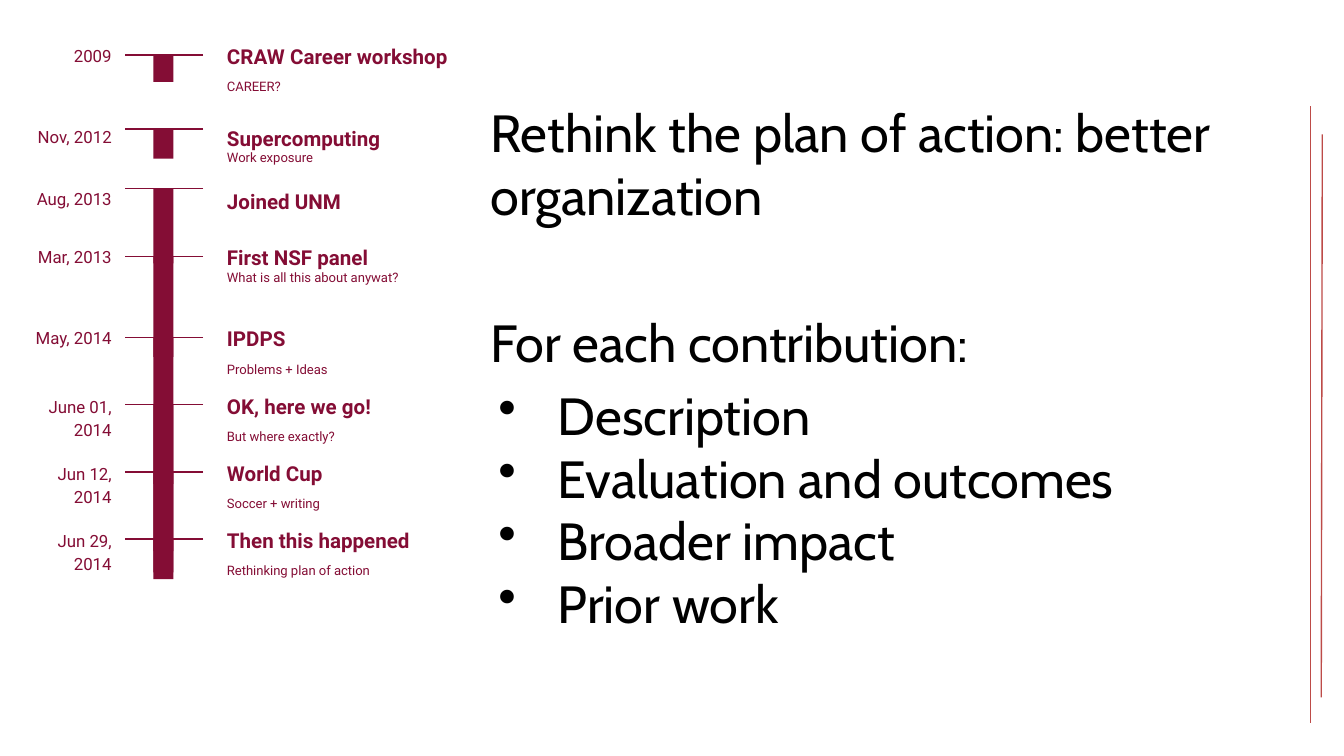
import pptx
import pptx.dml.color
import pptx.enum.shapes
import pptx.enum.text
import pptx.oxml
import pptx.oxml.ns
import pptx.util

Cm = pptx.util.Cm
Pt = pptx.util.Pt
ALIGN = pptx.enum.text.PP_ALIGN

COLORS = {"maroon": "840D35", "rule": "BD4B48", "text": "000000"}

FONTS = {
    "date": {"name": "Roboto", "size": Pt(9), "bold": False},
    "title": {"name": "Roboto", "size": Pt(11), "bold": True},
    "detail": {"name": "Roboto", "size": Pt(7), "bold": False},
    "body": {"name": "Cabin", "size": Pt(28), "bold": False},
}

REGULAR = {"date": -0.46, "title": -0.53, "detail": 0.23}
EVENTS = [
    (0, 0.51, "2009", "CRAW Career workshop", "CAREER?", {}),
    (1.4, 0.56, "Nov, 2012", "Supercomputing", "Work exposure",
     {"date": -0.33, "title": -0.38, "detail": 0.18}),
    (2.52, 1.42, "Aug, 2013", "Joined UNM", None,
     {"date": -0.28, "title": -0.3}),
    (3.81, 1.9, "Mar, 2013", "First NSF panel",
     "What is all this about anywat?", {"detail": 0.03}),
    (5.34, 2.77, "May, 2014", "IPDPS", "Problems + Ideas", {}),
    (6.61, 2.77, "June 01, 2014", "OK, here we go!", "But where exactly?", {}),
    (7.88, 1.9, "Jun 12, 2014", "World Cup", "Soccer + writing", {}),
    (9.15, 0.76, "Jun 29, 2014", "Then this happened",
     "Rethinking plan of action", {}),
]

BODY = [
    ("Rethink the plan of action: better organization", 0, False),
    ("For each contribution:", 45, False),
    ("Description", 5.6, True),
    ("Evaluation and outcomes", 0, True),
    ("Broader impact", 0, True),
    ("Prior work", 0, True),
]


def rgb(color):
    return pptx.dml.color.RGBColor.from_string(COLORS[color])


def apply_format(target, values):
    for name, value in values.items():
        setattr(target, name, value)


def add_line(slide, start, end, color):
    line = slide.shapes.add_connector(
        pptx.enum.shapes.MSO_CONNECTOR.STRAIGHT,
        *(Cm(length) for length in (*start, *end)))
    line.line.color.rgb = rgb(color)
    line.line.width = Pt(0.75)
    pptx.oxml.ns.qn("a:effectLst")
    line._element.spPr.append(pptx.oxml.parse_xml(
        f'<a:effectLst {pptx.oxml.ns.nsdecls("a")}/>'))


def add_frame(slide, left, top, width, height):
    shape = slide.shapes.add_textbox(Cm(left), Cm(top), Cm(width), Cm(height))
    apply_format(shape.text_frame, {
        "word_wrap": True,
        "vertical_anchor": pptx.enum.text.MSO_ANCHOR.TOP,
        "margin_left": Cm(0.25), "margin_right": Cm(0.25),
        "margin_top": Cm(0.25), "margin_bottom": Cm(0.25),
    })
    return shape.text_frame


def write(paragraph, text, style, color, values):
    apply_format(paragraph, values)
    run = paragraph.add_run()
    run.text = text
    apply_format(run.font, FONTS[style])
    run.font.color.rgb = rgb(color)


def add_bullet(paragraph):
    properties = paragraph._p.get_or_add_pPr()
    properties.set("marL", str(Cm(1.27)))
    properties.set("indent", str(Cm(-1.12)))
    namespace = pptx.oxml.ns.nsdecls("a")
    for xml in (
        f'<a:buClr {namespace}><a:srgbClr val="{COLORS["text"]}"/></a:buClr>',
        f'<a:buChar {namespace} char="•"/>',
    ):
        properties.append(pptx.oxml.parse_xml(xml))


def add_event(slide, left, top, event):
    offset, bar_height, date, title, detail, shifts = event
    tick = top + offset
    bar = slide.shapes.add_shape(
        pptx.enum.shapes.MSO_SHAPE.RECTANGLE,
        Cm(left + 2.65), Cm(tick), Cm(0.38), Cm(bar_height))
    bar.shadow.inherit = False
    bar.fill.solid()
    bar.fill.fore_color.rgb = rgb("maroon")
    bar.line.fill.background()
    add_line(slide, (left + 3.59, tick), (left + 2.11, tick), "maroon")

    positions = REGULAR | shifts
    for style, text, x, width, height, align in (
        ("date", date, 0, 2.11, 0.97, ALIGN.RIGHT),
        ("title", title, 3.79, 7.57, 0.76, ALIGN.LEFT),
        ("detail", detail, 3.79, 7.57, 1.14, ALIGN.LEFT),
    ):
        if text:
            frame = add_frame(slide, left + x, tick + positions[style], width, height)
            write(frame.paragraphs[0], text, style, "maroon",
                  {"alignment": align, "line_spacing": 1.15})


def add_timeline(slide, left, top):
    for event in EVENTS:
        add_event(slide, left, top, event)


def add_body(slide, left, top, width, height):
    frame = add_frame(slide, left, top, width, height)
    for index, (text, space, bulleted) in enumerate(BODY):
        paragraph = frame.add_paragraph() if index else frame.paragraphs[0]
        if bulleted:
            add_bullet(paragraph)
        write(paragraph, text, "body", "text",
              {"alignment": ALIGN.LEFT, "space_before": Pt(space)})


def add_side_rules(slide, left, top):
    add_line(slide, (left, top), (left, top + 11.66), "rule")
    add_line(slide, (left + 0.22, top + 0.53), (left + 0.2, top + 11.17), "rule")


def main():
    presentation = pptx.Presentation()
    presentation.slide_width = Cm(25.4)
    presentation.slide_height = Cm(14.29)
    slide = presentation.slides.add_slide(presentation.slide_layouts[6])
    add_side_rules(slide, 24.77, 2.01)
    add_timeline(slide, 0.25, 1.04)
    add_body(slide, 9.02, 1.65, 15.16, 10.85)
    presentation.save("out.pptx")


if __name__ == "__main__":
    main()
